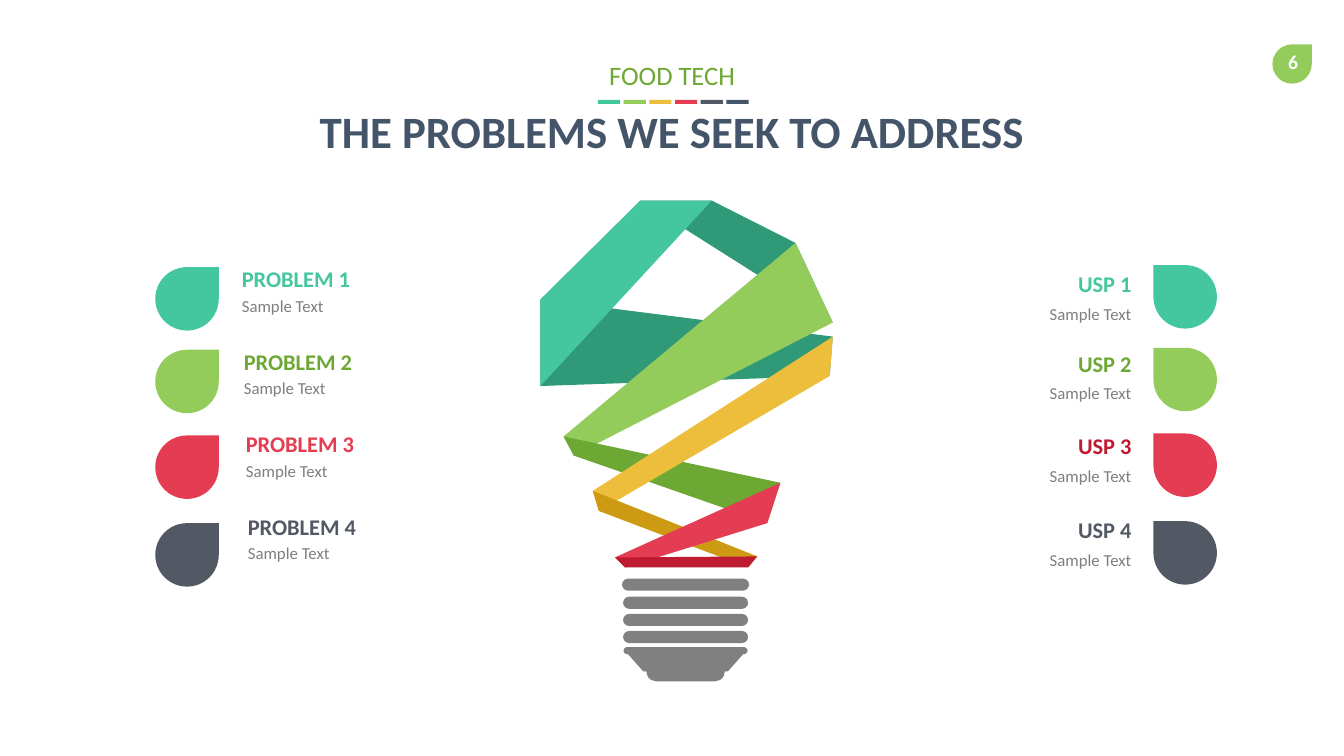
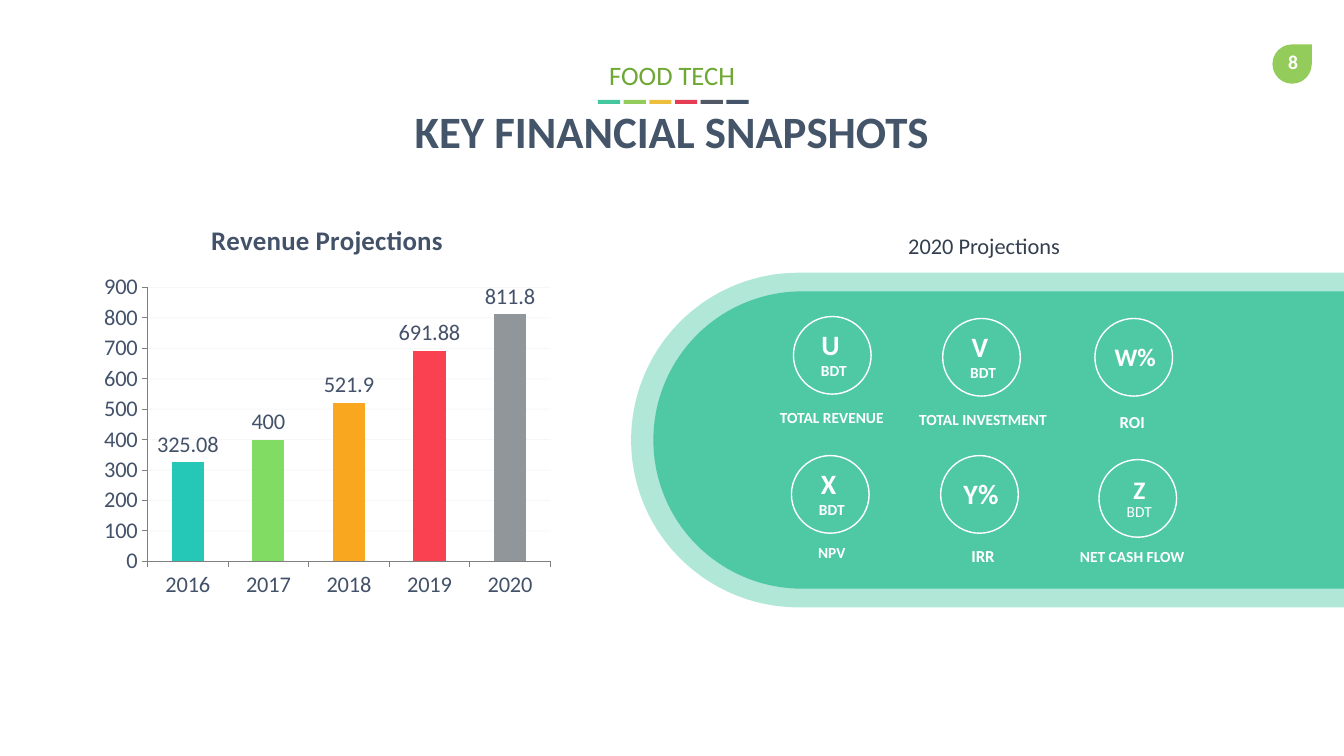
from lxml import etree
from pptx import Presentation
from pptx.chart.data import CategoryChartData
from pptx.dml.color import RGBColor
from pptx.enum.chart import XL_CHART_TYPE, XL_LABEL_POSITION, XL_TICK_MARK
from pptx.enum.shapes import MSO_SHAPE
from pptx.enum.text import MSO_ANCHOR, PP_ALIGN
from pptx.oxml.ns import qn
from pptx.util import Inches, Pt

LEFT, MID, RIGHT = PP_ALIGN.LEFT, PP_ALIGN.CENTER, PP_ALIGN.RIGHT
TOP, CENTRE = MSO_ANCHOR.TOP, MSO_ANCHOR.MIDDLE
RECT, OVAL, DROP = MSO_SHAPE.RECTANGLE, MSO_SHAPE.OVAL, MSO_SHAPE.TEAR
ROUND, PILL = MSO_SHAPE.ROUNDED_RECTANGLE, MSO_SHAPE.ROUND_2_SAME_RECTANGLE
COLUMN = XL_CHART_TYPE.COLUMN_CLUSTERED
OUT_END, TICK_OUT = XL_LABEL_POSITION.OUTSIDE_END, XL_TICK_MARK.OUTSIDE

FONT = "Calibri"
WIDE, HIGH = 13.33, 7.5
TEAL, LIME, GOLD, RED = "44C69E", "93CC5A", "EDBD3C", "E43D53"
SLATE, NAVY, WHITE, GREY = "525964", "445469", "FFFFFF", "808080"
PINE, LEAF, OCHRE, WINE = "2F9978", "6EA834", "CC9A13", "BE1A30"
BODY, INK, LABEL = "7F7F7F", "333F4F", "435269"
BARS = [TEAL, LIME, GOLD, RED, SLATE, NAVY]

# drop colour, heading colours left and right, drop top, right heading top
ROWS = [
    (TEAL, TEAL, TEAL, 2.65, 2.63),
    (LIME, LEAF, LEAF, 3.47, 3.42),
    (RED, RED, WINE, 4.32, 4.24),
    (SLATE, SLATE, SLATE, 5.19, 5.07),
]

# ribbons of the bulb, back to front
RIBBONS = [
    (PINE, [(6.35, 1.99), (8.26, 3.2), (7.89, 2.41), (7.06, 1.99)]),
    (PINE, [(5.36, 2.97), (8.26, 3.34), (8.23, 3.73), (5.36, 3.83)]),
    (LIME, [(7.89, 2.41), (5.59, 4.33), (5.69, 4.52), (8.26, 3.2)]),
    (LEAF, [(5.59, 4.33), (7.74, 4.79), (7.61, 5.19), (5.69, 4.52)]),
    (GOLD, [(8.26, 3.34), (5.88, 4.87), (5.94, 5.07), (8.23, 3.73)]),
    (OCHRE, [(5.88, 4.87), (7.51, 5.52), (7.42, 5.63), (5.94, 5.07)]),
    (TEAL, [(6.35, 1.99), (5.36, 2.97), (5.36, 3.83), (7.06, 1.99)]),
    (RED, [(6.2, 5.63), (7.61, 5.19), (7.74, 4.79), (6.1, 5.53)]),
    (WINE, [(6.1, 5.53), (7.51, 5.52), (7.42, 5.63), (6.2, 5.63)]),
]
SOCKET = [(6.22, 6.48), (7.38, 6.48), (7.22, 6.66), (6.38, 6.66)]
# top, width, height of the bulb's rings
RINGS = [(5.74, 1.26, 0.12), (5.92, 1.24, 0.12), (6.09, 1.24, 0.12),
         (6.26, 1.24, 0.12), (6.42, 1.23, 0.07), (6.56, 0.78, 0.2)]

SALES = [("2016", 325.08, "25C8B6"), ("2017", 400, "81DC63"),
         ("2018", 521.9, "F9A71F"), ("2019", 691.88, "FA4151"),
         ("2020", 811.8, "91969A")]

PANELS = [(6.26, 3.32, 42), (6.48, 2.95, 90)]  # left, height, opacity
UNIT = ("BDT", 11, True)
# circle left and top, [(centre below circle top, lines)], label, label size
KPIS = [
    (7.87, 3.14, [(0.37, [("U ", 20, True), UNIT])], "TOTAL REVENUE", 11),
    (9.35, 3.16, [(0.37, [("V ", 20, True), UNIT])], "TOTAL INVESTMENT", 11),
    (10.86, 3.16, [(0.38, [("W%", 18, True)])], "ROI", 12),
    (7.85, 4.52, [(0.37, [("X ", 20, True), UNIT])], "NPV", 11),
    (9.33, 4.52, [(0.37, [("Y%", 20, True)])], "IRR", 12),
    (10.9, 4.56, [(0.3, [("Z", 18, True)]), (0.51, [("BDT", 11, False)])],
     "NET CASH FLOW", 11),
]
LABEL_MIDS = [8.25, 9.75, 11.23]


def rgb(code):
    return RGBColor.from_string(code)


def fade(node, percent):
    """Set the opacity of every colour inside an XML node."""
    for color in node.iter(qn("a:srgbClr")):
        etree.SubElement(color, qn("a:alpha")).set("val", str(percent * 1000))


def style(font, size, color, bold=False):
    font.name, font.size, font.bold = FONT, Pt(size), bold
    font.color.rgb = rgb(color)


def paint(shape, fill=None, line=None):
    shape.shadow.inherit = False
    if fill:
        shape.fill.solid()
        shape.fill.fore_color.rgb = rgb(fill)
    else:
        shape.fill.background()
    if line:
        shape.line.color.rgb = rgb(line)
        shape.line.width = Pt(1)
    else:
        shape.line.fill.background()
    return shape


def add_box(slide, kind, x, y, w, h, **look):
    spot = [Inches(v) for v in (x, y, w, h)]
    return paint(slide.shapes.add_shape(kind, *spot), **look)


def add_poly(slide, dots, fill):
    dots = [(Inches(x), Inches(y)) for x, y in dots]
    pen = slide.shapes.build_freeform(*dots[0])
    pen.add_line_segments(dots[1:], close=True)
    paint(pen.convert_to_shape(), fill)


def add_text(slide, text, x, y, w, h, size=12, color=WHITE, bold=False,
             align=MID, anchor=TOP, space=None):
    """Write a string, or a list of (text, size, bold) lines."""
    box = slide.shapes.add_textbox(*[Inches(v) for v in (x, y, w, h)])
    frame = box.text_frame
    frame.word_wrap, frame.vertical_anchor = True, anchor
    lines = [(text, size, bold)] if isinstance(text, str) else text
    for i, (words, points, heavy) in enumerate(lines):
        para = frame.add_paragraph() if i else frame.paragraphs[0]
        para.alignment = align
        if space:
            para.line_spacing = space
        run = para.add_run()
        run.text = words
        style(run.font, points, color, heavy)


def add_page(deck, title, number):
    slide = deck.slides.add_slide(deck.slide_layouts[6])
    add_box(slide, DROP, 12.62, 0.44, 0.39, 0.39, fill=LIME)
    add_text(slide, number, 12.61, 0.45, 0.43, 0.34, size=14, bold=True)
    add_text(slide, title, 0.94, 0.98, 11.45, 0.64, size=32, color=NAVY,
             bold=True)
    for i, color in enumerate(BARS):
        add_box(slide, RECT, 5.93 + i * 0.255, 0.99, 0.22, 0.04, fill=color)
    add_text(slide, "FOOD TECH", 0.94, 0.54, 11.45, 0.42, size=19, color=LEAF)
    return slide


def add_bulb(slide):
    add_poly(slide, SOCKET, GREY)
    for top, w, h in RINGS:
        ring = add_box(slide, ROUND, 6.8 - w / 2, top, w, h, fill=GREY)
        ring.adjustments[0] = 0.5
    for color, dots in RIBBONS:
        add_poly(slide, dots, color)


def add_rows(slide):
    for i, (drop, left, right, top, head) in enumerate(ROWS):
        x, y = 2.3 + i * 0.02, 2.58 + i * 0.82
        add_box(slide, DROP, 1.54, top, 0.63, 0.63, fill=drop)
        twin = add_box(slide, DROP, 11.44, top - 0.02, 0.63, 0.63, fill=drop)
        twin.rotation = 270
        sides = [(f"PROBLEM {i + 1}", x, y, 0.3, left, LEFT),
                 (f"USP {i + 1}", 9.04, head, 0.33, right, RIGHT)]
        for name, x, y, drop_by, color, align in sides:
            add_text(slide, name, x, y, 2.28, 0.37, size=16, color=color,
                     bold=True, align=align)
            add_text(slide, "Sample Text", x, y + drop_by, 2.28, 0.3,
                     color=BODY, align=align)


def add_sales(slide):
    years, sums, colors = zip(*SALES)
    data = CategoryChartData()
    data.categories = years
    data.add_series("Series 1", sums)
    spot = [Inches(v) for v in (0.94, 2.01, 4.61, 4.01)]
    chart = slide.shapes.add_chart(COLUMN, *spot, data).chart
    style(chart.font, 16, LABEL)
    chart.has_legend = False
    chart.has_title = True
    head = chart.chart_title.text_frame
    head.text = "Revenue Projections"
    style(head.paragraphs[0].runs[0].font, 19.2, LABEL, True)

    plot = chart.plots[0]
    plot.gap_width, plot.vary_by_categories = 150, False
    plot.has_data_labels = True
    plot.data_labels.show_value = True
    plot.data_labels.position = OUT_END
    style(plot.data_labels.font, 16, LABEL)
    for i, color in enumerate(colors):
        fill = plot.series[0].points[i].format.fill
        fill.solid()
        fill.fore_color.rgb = rgb(color)

    for axis in (chart.category_axis, chart.value_axis):
        axis.major_tick_mark = TICK_OUT
        axis.format.line.color.rgb = rgb(GREY)
        axis.format.line.width = Pt(0.75)
    axis = chart.value_axis
    axis.minimum_scale, axis.maximum_scale, axis.major_unit = 0, 900, 100
    grid = axis.major_gridlines
    grid.format.line.color.rgb = rgb(GREY)
    grid.format.line.width = Pt(0.75)
    fade(axis._element.find(qn("c:majorGridlines")), 5)


def add_kpis(slide):
    for left, h, clear in PANELS:
        w = WIDE - left
        panel = add_box(slide, PILL, left + (w - h) / 2, 4.365 - w / 2, h, w,
                        fill=TEAL)
        panel.rotation = 270
        panel.adjustments[0], panel.adjustments[1] = 0.5, 0
        fade(panel._element.spPr, clear)
    for i, (x, y, parts, label, size) in enumerate(KPIS):
        row, col = divmod(i, 3)
        add_box(slide, OVAL, x, y, 0.77, 0.77, line=WHITE)
        for mid, lines in parts:
            add_text(slide, lines, x + 0.05, y + mid - 0.31, 0.7, 0.62,
                     anchor=CENTRE)
        add_text(slide, label, LABEL_MIDS[col] - 0.85,
                 4 + row * 1.34 + col * 0.02, 1.7, 0.29, size=size, bold=True)
    add_text(slide, "2020 Projections", 8.91, 2.2, 1.9, 0.4, size=16,
             color=INK, align=LEFT, space=1.2)


def main():
    deck = Presentation()
    deck.slide_width, deck.slide_height = Inches(WIDE), Inches(HIGH)
    slide = add_page(deck, "THE PROBLEMS WE SEEK TO ADDRESS", "6")
    add_bulb(slide)
    add_rows(slide)
    slide = add_page(deck, "KEY FINANCIAL SNAPSHOTS", "8")
    add_sales(slide)
    add_kpis(slide)
    deck.save("out.pptx")


if __name__ == "__main__":
    main()
